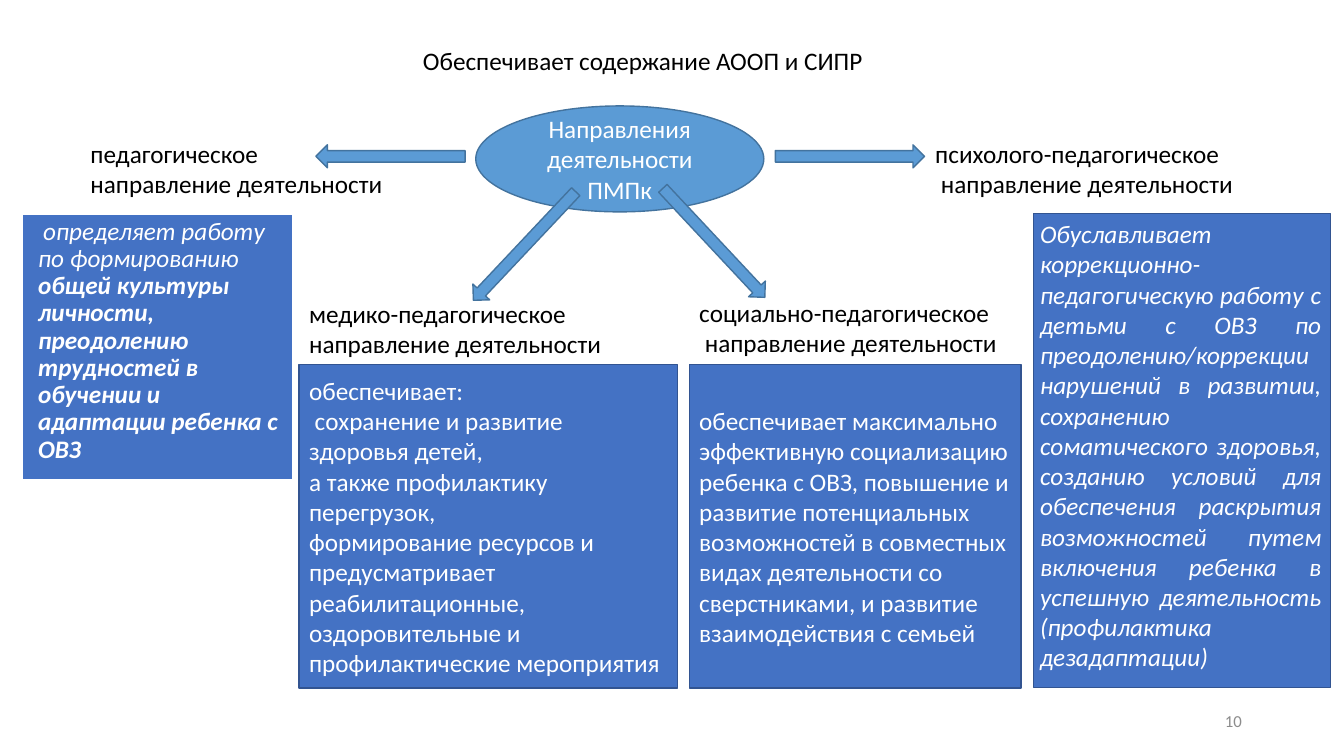
import pptx
import pptx.dml.color
import pptx.enum.shapes
import pptx.enum.text
import pptx.util

Cm = pptx.util.Cm
Pt = pptx.util.Pt
Kind = pptx.enum.shapes.MSO_SHAPE
Align = pptx.enum.text.PP_ALIGN
Anchor = pptx.enum.text.MSO_ANCHOR
AutoSize = pptx.enum.text.MSO_AUTO_SIZE

COLORS = {
    "sky": "5B9BD5",
    "sky_line": "43739E",
    "panel": "4472C4",
    "panel_line": "325491",
    "white": "FFFFFF",
    "black": "000000",
    "gray": "8C8C8C",
}


class SlideBuilder:
    font = "Calibri"
    size = 18

    def __init__(self, slide):
        self.slide = slide

    def color(self, name):
        return pptx.dml.color.RGBColor.from_string(COLORS[name])

    def format_run(self, run, color, size=size, italic=False, bold=False):
        run.font.name = self.font
        run.font.size = Pt(size)
        run.font.color.rgb = self.color(color)
        run.font.italic = italic
        run.font.bold = bold

    def fill_text(self, frame, text, color, align=Align.LEFT, **style):
        frame.text = text
        for paragraph in frame.paragraphs:
            paragraph.alignment = align
            for run in paragraph.runs:
                self.format_run(run, color, **style)

    def shape(self, kind, box, fill, line, line_width=1):
        shape = self.slide.shapes.add_shape(kind, *map(Cm, box))
        shape.shadow.inherit = False
        shape.fill.solid()
        shape.fill.fore_color.rgb = self.color(fill)
        shape.line.color.rgb = self.color(line)
        shape.line.width = Pt(line_width)
        return shape

    def ellipse(self, box, text):
        shape = self.shape(Kind.OVAL, box, "sky", "sky_line")
        self.fill_text(shape.text_frame, text, "white", Align.CENTER)

    def arrow(self, left, top, rotation):
        shape = self.shape(Kind.DOWN_ARROW, (left, top, 0.58, 3.76), "sky", "sky_line")
        shape.rotation = rotation

    def panel(self, box, text=""):
        shape = self.shape(Kind.RECTANGLE, box, "panel", "panel_line")
        shape.text_frame.vertical_anchor = Anchor.MIDDLE
        if text:
            self.fill_text(shape.text_frame, text, "white")

    def goal_panel(self, box, opening, emphasis):
        shape = self.shape(Kind.RECTANGLE, box, "panel", "white", 1.5)
        shape.text_frame.vertical_anchor = Anchor.TOP
        self.fill_text(shape.text_frame, opening, "white", italic=True)
        paragraph = shape.text_frame.paragraphs[0]
        run = paragraph.add_run()
        run.text = emphasis
        self.format_run(run, "white", italic=True, bold=True)
        paragraph.line_spacing = 0.9
        paragraph.space_before = Pt(10)
        properties = paragraph._p.get_or_add_pPr()
        properties.set("marL", str(Cm(0.15)))
        properties.set("indent", str(Cm(0.13)))

    def text(self, box, text, color="black", wrap=True, anchor=Anchor.TOP,
             auto_size=AutoSize.SHAPE_TO_FIT_TEXT, **style):
        frame = self.slide.shapes.add_textbox(*map(Cm, box)).text_frame
        frame.word_wrap = wrap
        frame.auto_size = auto_size
        frame.vertical_anchor = anchor
        self.fill_text(frame, text, color, **style)


def main():
    presentation = pptx.Presentation()
    presentation.slide_width = Cm(33.87)
    presentation.slide_height = Cm(19.05)
    builder = SlideBuilder(presentation.slides.add_slide(presentation.slide_layouts[6]))

    builder.ellipse((11.99, 2.67, 7.26, 2.67), "Направления деятельности ПМПк")

    for left, top, rotation in (
        (9.55, 2.06, 90),
        (21.13, 2.06, 270),
        (12.93, 4.32, 43.3),
        (17.7, 4.24, 316.9),
    ):
        builder.arrow(left, top, rotation)

    for left, top, width, label in (
        (2.03, 3.35, 7.95, "педагогическое \vнаправление деятельности"),
        (23.32, 3.35, 8.1, "психолого-педагогическое\v направление деятельности"),
        (7.54, 7.39, 7.95, "медико-педагогическое \vнаправление деятельности"),
        (17.37, 7.37, 8.1, "социально-педагогическое\v направление деятельности"),
    ):
        builder.text((left, top, width, 1.8), label, wrap=False)

    builder.goal_panel(
        (0.56, 5.38, 6.83, 6.73),
        "определяет работу по формированию ",
        "общей культуры личности, преодолению трудностей в обучении "
        "и адаптации ребенка с ОВЗ",
    )

    builder.panel((26.04, 5.38, 7.49, 11.94))
    builder.text(
        (25.96, 5.38, 7.59, 12.57),
        "Обуславливает коррекционно-педагогическую работу с детьми с ОВЗ "
        "по преодолению/коррекции нарушений в развитии, сохранению "
        "соматического здоровья, созданию условий для обеспечения раскрытия "
        "возможностей путем включения ребенка в успешную деятельность "
        "(профилактика дезадаптации)",
        "white",
        align=Align.JUSTIFY,
        italic=True,
    )

    builder.panel(
        (17.37, 9.19, 8.36, 8.15),
        "обеспечивает максимально эффективную социализацию ребенка с ОВЗ, "
        "повышение и развитие потенциальных возможностей в совместных видах "
        "деятельности со сверстниками, и развитие взаимодействия с семьей",
    )
    builder.panel(
        (7.54, 9.19, 9.53, 8.15),
        "обеспечивает:\n"
        " сохранение и развитие здоровья детей,\n"
        "а также профилактику перегрузок,\n"
        "формирование ресурсов и\n"
        "предусматривает реабилитационные, оздоровительные и "
        "профилактические мероприятия",
    )

    builder.text((10.41, 1.02, 11.71, 1.02), "Обеспечивает содержание АООП и СИПР")
    builder.text((23.93, 17.65, 7.62, 1.02), "10", "gray", anchor=Anchor.MIDDLE,
                 auto_size=AutoSize.NONE, align=Align.RIGHT, size=12)

    presentation.save("out.pptx")


if __name__ == "__main__":
    main()
